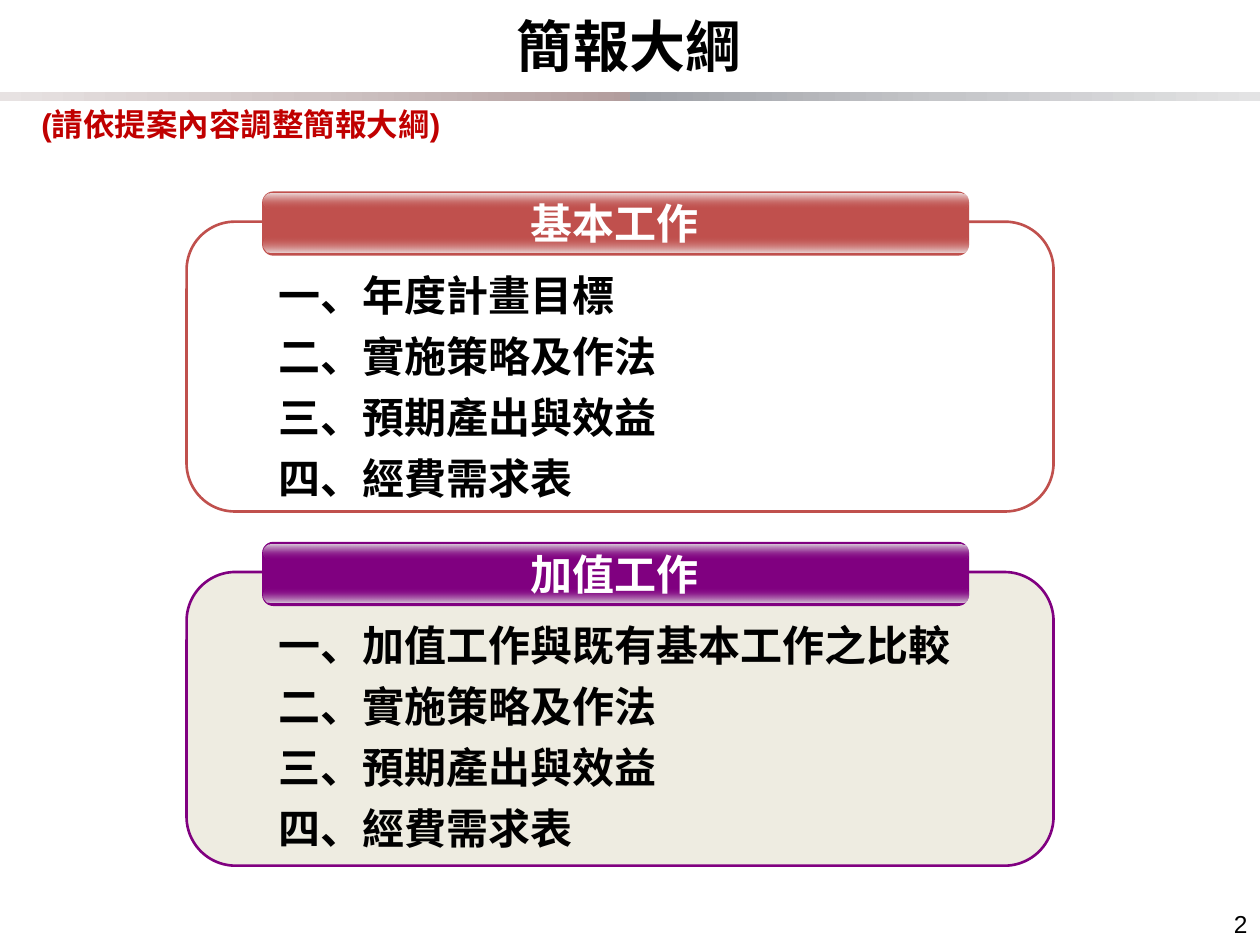
from pptx import Presentation
from pptx.dml.color import RGBColor
from pptx.enum.shapes import MSO_SHAPE
from pptx.enum.text import MSO_ANCHOR, PP_ALIGN
from pptx.oxml import parse_xml
from pptx.oxml.ns import nsdecls
from pptx.util import Pt

RECT, ROUND = MSO_SHAPE.RECTANGLE, MSO_SHAPE.ROUNDED_RECTANGLE
LEFT, CENTER, RIGHT = PP_ALIGN.LEFT, PP_ALIGN.CENTER, PP_ALIGN.RIGHT
TOP, MIDDLE, BOTTOM = MSO_ANCHOR.TOP, MSO_ANCHOR.MIDDLE, MSO_ANCHOR.BOTTOM

THEME = {
    "latin": "Arial", "cjk": "Noto Sans CJK SC",
    "black": "000000", "white": "FFFFFF", "note": "C00000",
    "basic": "C0504D", "basic_tints": ("EDDBDB", "EBD7D7"),
    "added": "800080", "added_tints": ("DACFDA", "DDD4DD"), "added_panel": "EEECE1",
    "rule_left": ["B29D9D", "CFC4C4", "E7E2E2"],
    "rule_right": ["9EA0A6", "C5C6C9", "E3E3E4"],
    "title_size": 32, "body_size": 24, "note_size": 18, "number_size": 14,
}


def fill_gradient(sp, colors, angle, clear=None):
    """Spread colors evenly, clockwise by angle; the color at index clear is transparent."""
    stops = ""
    for i, color in enumerate(colors):
        alpha = '<a:alpha val="0"/>' if i == clear else ""
        pos = 100000 * i // (len(colors) - 1)
        stops += f'<a:gs pos="{pos}"><a:srgbClr val="{color}">{alpha}</a:srgbClr></a:gs>'
    grad = parse_xml(f'<a:gradFill {nsdecls("a")} rotWithShape="1"><a:gsLst>{stops}</a:gsLst>'
                     f'<a:lin ang="{angle * 60000}" scaled="0"/></a:gradFill>')
    sp.line.fill.background()
    sp.shadow.inherit = False
    sp.fill.background()
    no_fill = sp.element.spPr.find("{*}noFill")
    no_fill.getparent().replace(no_fill, grad)


def write(sp, lines, size, color, align=LEFT, anchor=MIDDLE, latin=THEME["latin"], bold=True):
    tf = sp.text_frame
    tf.text = "\n".join(lines)
    tf.word_wrap = True
    tf.vertical_anchor = anchor
    tf.margin_top = tf.margin_bottom = Pt(3.6) if anchor != MIDDLE else 0
    for p in tf.paragraphs:
        p.alignment = align
        for r in p.runs:
            r.font.size, r.font.bold, r.font.name = Pt(size), bold, latin
            r.font.color.rgb = RGBColor.from_string(color)
            r._r.find("{*}rPr/{*}latin").addnext(
                parse_xml(f'<a:ea {nsdecls("a")} typeface="{THEME["cjk"]}"/>'))


prs = Presentation()
prs.slide_width, prs.slide_height = Pt(720), Pt(540)
# The slide number field shows 2
prs.element.set("firstSlideNum", "2")
s = prs.slides.add_slide(prs.slide_layouts[5])

# Rule under the title, fading out to both sides
for x, colors, angle in [(0, THEME["rule_left"], 180), (360, THEME["rule_right"], 0)]:
    sp = s.shapes.add_shape(RECT, Pt(x), Pt(52.4), Pt(360), Pt(5.6))
    fill_gradient(sp, colors, angle)

title = s.shapes.title
title.left, title.top, title.width, title.height = Pt(252), Pt(2), Pt(215), Pt(47)
write(title, ["簡報大綱"], THEME["title_size"], THEME["black"], CENTER, latin=THEME["cjk"])

note = s.shapes.add_textbox(Pt(16.6), Pt(56.2), Pt(686), Pt(28.8))
write(note, ["(請依提案內容調整簡報大綱)"], THEME["note_size"], THEME["note"])

# Panels: header text, top, panel height, colour, panel fill, header tints, first item
common = ["二、實施策略及作法", "三、預期產出與效益", "四、經費需求表"]
panels = [
    ("基本工作", 109.4, 165.6, THEME["basic"], None, THEME["basic_tints"],
     "一、年度計畫目標"),
    ("加值工作", 309.6, 167.8, THEME["added"], THEME["added_panel"], THEME["added_tints"],
     "一、加值工作與既有基本工作之比較"),
]
for header, top, height, color, panel_fill, (light_top, light_bottom), first in panels:
    panel = s.shapes.add_shape(ROUND, Pt(106.6), Pt(top + 17.3), Pt(495.4), Pt(height))
    panel.shadow.inherit = False
    panel.line.color.rgb = RGBColor.from_string(color)
    panel.line.width = Pt(1.5)
    panel.fill.background()
    if panel_fill:
        panel.fill.solid()
        panel.fill.fore_color.rgb = RGBColor.from_string(panel_fill)

    group = s.shapes.add_group_shape()
    bar = group.shapes.add_shape(ROUND, Pt(149.8), Pt(top), Pt(404), Pt(36.7))
    bar.adjustments[0] = 0.175
    bar.shadow.inherit = False
    bar.line.fill.background()
    bar.fill.solid()
    bar.fill.fore_color.rgb = RGBColor.from_string(color)
    for dy, colors, clear in [(26, [color, light_bottom], 0), (1.4, [light_top, color], 1)]:
        gloss = group.shapes.add_shape(ROUND, Pt(150.8), Pt(top + dy), Pt(402.5), Pt(8.6))
        gloss.adjustments[0] = 0.5
        fill_gradient(gloss, colors, 90, clear)

    label = s.shapes.add_textbox(Pt(154.1), Pt(top), Pt(393.8), Pt(36))
    write(label, [header], THEME["body_size"], THEME["white"], CENTER, latin=THEME["cjk"])

    items = s.shapes.add_textbox(Pt(151.9), Pt(top + 41), Pt(405.4), Pt(141.8))
    write(items, [first] + common, THEME["body_size"], THEME["black"], anchor=TOP)
    for i, p in enumerate(items.text_frame.paragraphs):
        p.line_spacing = Pt(28.8)
        p.space_before = Pt(6 if i else 0)

# Slide number as a live field
number = s.shapes.add_textbox(Pt(552.2), Pt(502.6), Pt(167.8), Pt(37.4))
write(number, ["2"], THEME["number_size"], THEME["black"], RIGHT, BOTTOM, bold=False)
run = number.text_frame.paragraphs[0].runs[0]._r
field = parse_xml(f'<a:fld {nsdecls("a")} type="slidenum" '
                  'id="{B6F15528-21DE-4FAA-801E-634DDDAF4B2B}"/>')
run.addprevious(field)
field.extend(list(run))
run.getparent().remove(run)

prs.save("out.pptx")
